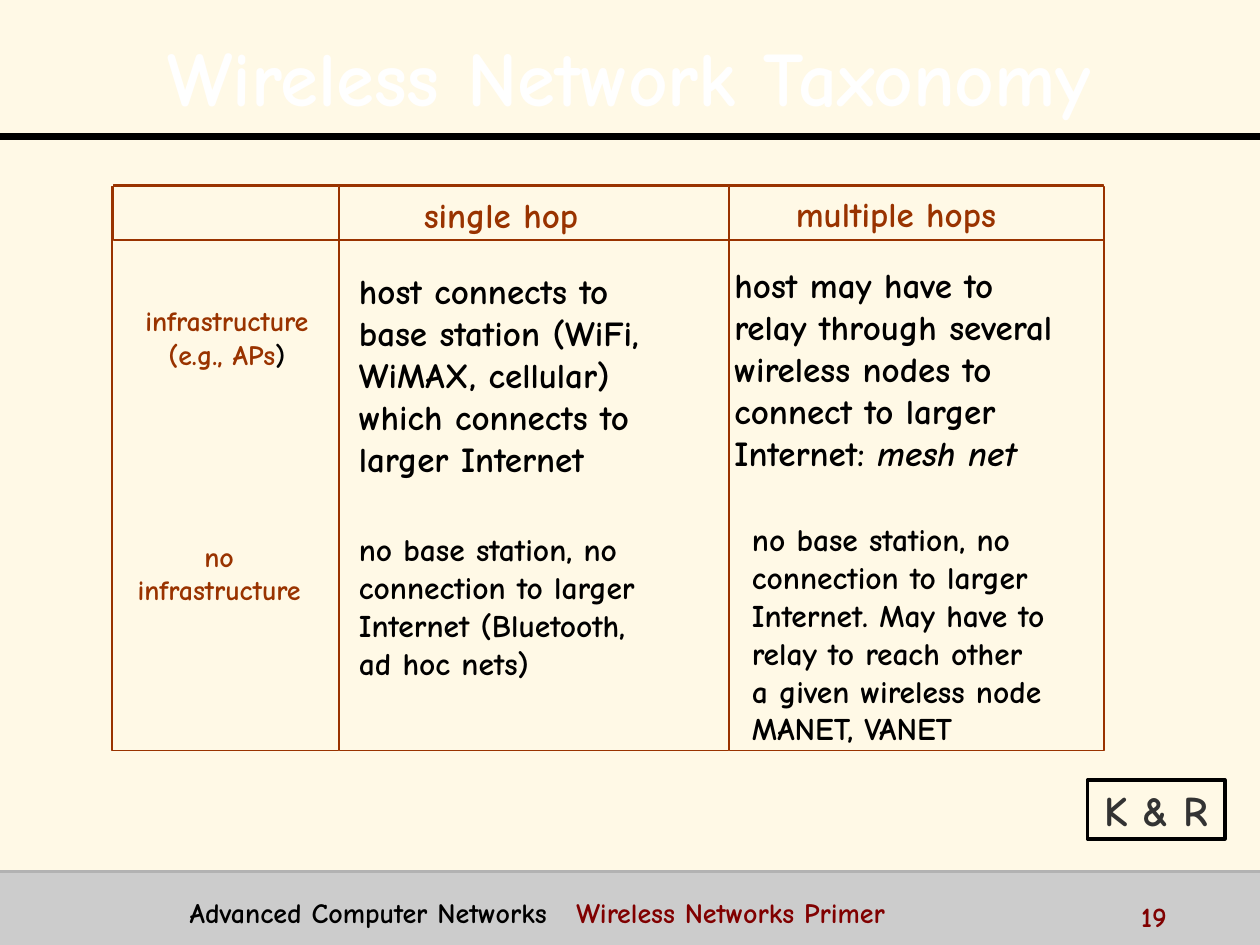
from lxml import etree
from pptx import Presentation
from pptx.dml.color import RGBColor
from pptx.enum.shapes import MSO_CONNECTOR, MSO_SHAPE
from pptx.enum.text import MSO_ANCHOR as Anchor, PP_ALIGN as Align
from pptx.oxml.ns import qn
from pptx.util import Pt

CREAM = RGBColor(0xFF, 0xF9, 0xE6)
WHITE = RGBColor(0xFF, 0xFF, 0xFF)
BLACK = RGBColor(0, 0, 0)
RUST = RGBColor(0x99, 0x33, 0x00)
MAROON = RGBColor(0x80, 0, 0)
CHARCOAL = RGBColor(0x33, 0x33, 0x33)
LIGHT_GRAY = RGBColor(0xCC, 0xCC, 0xCC)
MID_GRAY = RGBColor(0xB2, 0xB2, 0xB2)


class SlideBuilder:
    font = "Comic Neue"

    def __init__(self, slide):
        self.slide = slide

    def rect(self, left, top, width, height, fill=None, line=None, weight=0.75):
        box = self.slide.shapes.add_shape(
            MSO_SHAPE.RECTANGLE, Pt(left), Pt(top), Pt(width), Pt(height))
        box.shadow.inherit = False
        if fill is None:
            box.fill.background()
        else:
            box.fill.solid()
            box.fill.fore_color.rgb = fill
        if line is None:
            box.line.fill.background()
        else:
            box.line.color.rgb = line
            box.line.width = Pt(weight)
        return box

    def rule(self, y, color, weight):
        line = self.slide.shapes.add_connector(
            MSO_CONNECTOR.STRAIGHT, 0, Pt(y), Pt(720), Pt(y))
        line.line.color.rgb = color
        line.line.width = Pt(weight)
        etree.SubElement(line._element.spPr, qn("a:effectLst"))

    def fill_text(self, box, lines, size, color, align=Align.LEFT,
                  anchor=Anchor.TOP, wrap=True):
        """Each line is a string or a list of (text, color, italic) runs."""
        frame = box.text_frame
        frame.word_wrap = wrap
        frame.vertical_anchor = anchor
        for index, line in enumerate(lines):
            para = frame.add_paragraph() if index else frame.paragraphs[0]
            para.alignment = align
            runs = [(line, color, False)] if isinstance(line, str) else line
            for text, run_color, italic in runs:
                span = para.add_run()
                span.text = text
                span.font.name = self.font
                span.font.size = Pt(size)
                span.font.bold = True
                if italic:
                    span.font.italic = True
                span.font.color.rgb = run_color
        return frame

    def text(self, left, top, width, height, lines, size, color, **layout):
        box = self.slide.shapes.add_textbox(
            Pt(left), Pt(top), Pt(width), Pt(height))
        return self.fill_text(box, lines, size, color, **layout)

    def text_shadow(self, span):
        fill = span.font._element.find(qn("a:solidFill"))
        effects = etree.Element(qn("a:effectLst"))
        shadow = etree.SubElement(effects, qn("a:outerShdw"),
                                  dist="25400", dir="2700000", algn="tl")
        etree.SubElement(shadow, qn("a:srgbClr"), val="000000")
        fill.addnext(effects)

    def tab_stop(self, para, position):
        tabs = etree.SubElement(para._p.get_or_add_pPr(), qn("a:tabLst"))
        etree.SubElement(tabs, qn("a:tab"), pos=str(Pt(position)), algn="l")


def main():
    deck = Presentation()
    deck.slide_width, deck.slide_height = Pt(720), Pt(540)
    page = deck.slides.add_slide(deck.slide_layouts[6])
    page.background.fill.solid()
    page.background.fill.fore_color.rgb = CREAM
    builder = SlideBuilder(page)

    # Footer band and rules
    builder.rect(0, 498, 720, 42, fill=LIGHT_GRAY)
    builder.rule(78, BLACK, 4)
    builder.rule(498, MID_GRAY, 2)

    # Title
    title = builder.text(14, 9.5, 692, 62.5, ["Wireless Network Taxonomy"], 44,
                         WHITE, align=Align.CENTER, anchor=Anchor.MIDDLE)
    title.paragraphs[0].line_spacing = 1.1
    builder.text_shadow(title.paragraphs[0].runs[0])

    # Header row and column frames
    builder.rect(64.8, 105.8, 566, 31.4, line=RUST)
    for left, width in ((64, 129.4), (193.8, 222.6), (416.7, 214.3)):
        builder.rect(left, 106.5, width, 322.5, line=RUST)

    # Column and row headings
    headings = (
        (231.3, 107.2, 110, 31.4, 20, ["single hop"]),
        (442, 106.6, 140, 31.4, 20, ["multiple hops"]),
        (67, 170, 125.3, 46, 16,
         ["infrastructure", [("(e.g., APs", RUST, False), (")", BLACK, False)]]),
        (62.6, 304.6, 125.3, 46, 16, ["no", "infrastructure"]),
    )
    for left, top, width, height, size, lines in headings:
        builder.text(left, top, width, height, lines, size, RUST,
                     align=Align.CENTER)

    # Cell descriptions
    cells = (
        (198, 150.5, 204, 128, 20,
         ["host connects to", "base station (WiFi,", "WiMAX, cellular)",
          "which connects to", "larger Internet"]),
        (198, 299.5, 203, 94.5, 18,
         ["no base station, no", "connection to larger",
          "Internet (Bluetooth,", "ad hoc nets)"]),
        (412.6, 147, 224, 128, 20,
         ["host may have to", "relay through several", "wireless nodes to",
          "connect to larger",
          [("Internet: ", BLACK, False), ("mesh net", BLACK, True)]]),
        (422.6, 293.8, 215.3, 138, 18,
         ["no base station, no", "connection to larger",
          "Internet. May have to", "relay to reach other",
          "a given wireless node", "MANET, VANET"]),
    )
    for left, top, width, height, size, lines in cells:
        builder.text(left, top, width, height, lines, size, BLACK)

    # Footer text
    builder.text(645, 510.5, 72, 18, ["19"], 16, MAROON)
    footer = builder.text(
        101.3, 508, 524, 22.3,
        [[("Advanced Computer Networks", BLACK, False),
          ("\tWireless Networks Primer", MAROON, False)]], 16, BLACK)
    builder.tab_stop(footer.paragraphs[0], 221)

    # Source tag
    tag = builder.rect(621.4, 445.7, 78.5, 33.8, line=BLACK, weight=2)
    builder.fill_text(tag, ["K & R"], 24, CHARCOAL, align=Align.CENTER,
                      anchor=Anchor.MIDDLE, wrap=False)

    deck.save("out.pptx")


if __name__ == "__main__":
    main()
